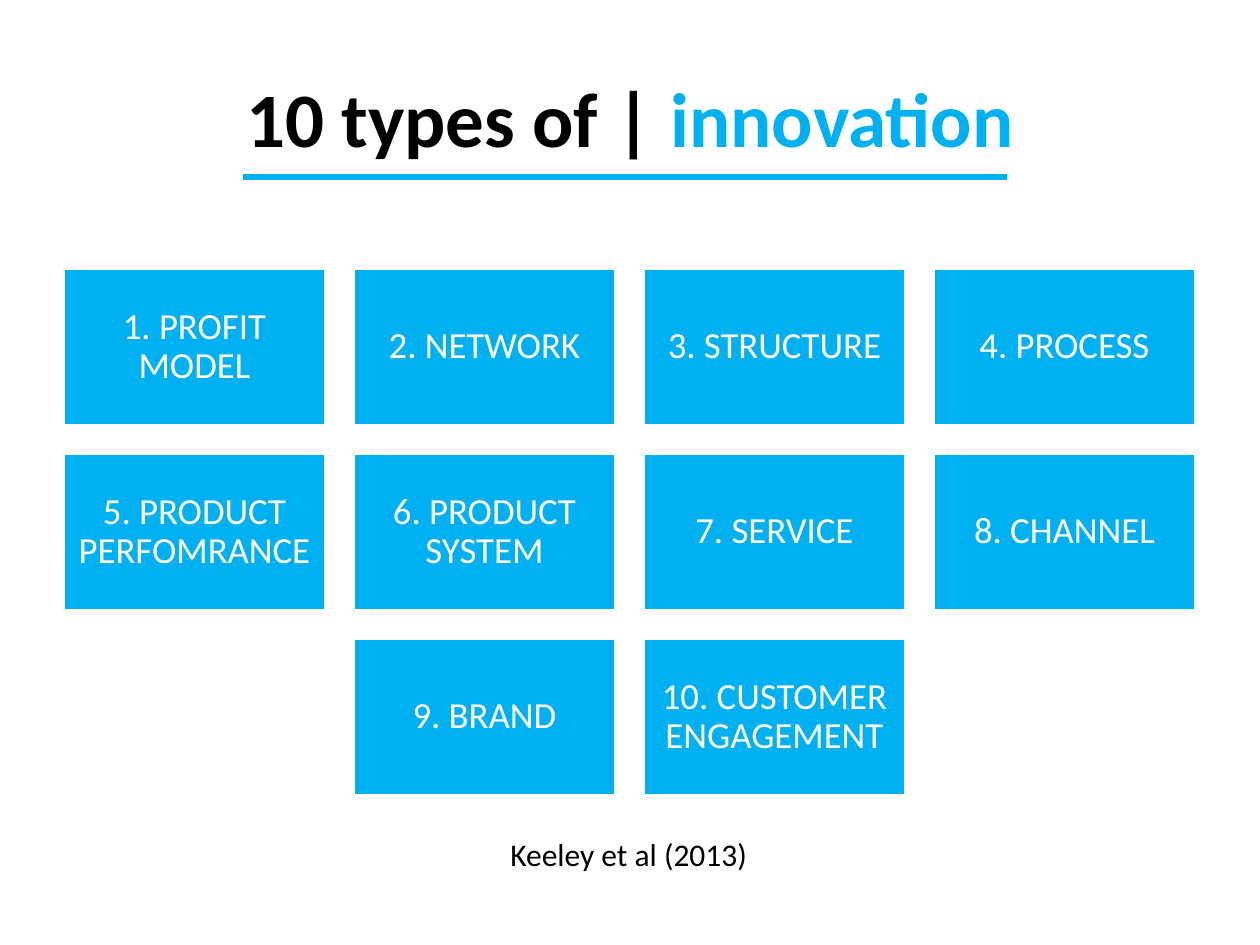
from lxml import etree
from pptx import Presentation
from pptx.dml.color import RGBColor
from pptx.enum.shapes import MSO_CONNECTOR, MSO_SHAPE
from pptx.enum.text import MSO_ANCHOR, MSO_AUTO_SIZE, PP_ALIGN
from pptx.oxml.ns import qn
from pptx.util import Pt

CENTER, MIDDLE = PP_ALIGN.CENTER, MSO_ANCHOR.MIDDLE
RECTANGLE, STRAIGHT = MSO_SHAPE.RECTANGLE, MSO_CONNECTOR.STRAIGHT
FIT_SHAPE = MSO_AUTO_SIZE.SHAPE_TO_FIT_TEXT
BLUE = RGBColor(0x00, 0xB0, 0xF0)
WHITE = RGBColor(0xFF, 0xFF, 0xFF)
BLACK = RGBColor(0x00, 0x00, 0x00)
SCALE = 914400 / 126  # EMU per px


def px(*lengths):
    return [round(length * SCALE) for length in lengths]


def add_text(paragraph, text, color, **formats):
    run = paragraph.add_run()
    run.text = text
    run.font.color.rgb = color
    for name, value in {"name": "Calibri", **formats}.items():
        setattr(run.font, name, value)


presentation = Presentation()
presentation.slide_width, presentation.slide_height = px(1260, 945)
slide = presentation.slides.add_slide(presentation.slide_layouts[5])

# Title
title = slide.shapes.title
title.left, title.top, title.width, title.height = px(63, 38, 1134, 158)
title.text_frame.vertical_anchor = MIDDLE
heading = title.text_frame.paragraphs[0]
heading.alignment = CENTER
for text, color in [("10 types of | ", BLACK), ("innovation", BLUE)]:
    add_text(heading, text, color, size=Pt(44), bold=True)

# Grid of innovation types: the last row is centred
ROWS = [
    ["1. PROFIT MODEL", "2. NETWORK", "3. STRUCTURE", "4. PROCESS"],
    ["5. PRODUCT PERFOMRANCE", "6. PRODUCT SYSTEM", "7. SERVICE", "8. CHANNEL"],
    ["9. BRAND", "10. CUSTOMER ENGAGEMENT"],
]
BOX_WIDTH, BOX_HEIGHT, PITCH_X, PITCH_Y = 263, 158, 290, 185
MARGIN = px(11)[0]
for row, labels in enumerate(ROWS):
    indent = (4 - len(labels)) * PITCH_X // 2
    for column, label in enumerate(labels):
        box = slide.shapes.add_shape(RECTANGLE, *px(
            63 + indent + column * PITCH_X, 268 + row * PITCH_Y, BOX_WIDTH, BOX_HEIGHT))
        box.shadow.inherit = False
        box.fill.solid()
        box.fill.fore_color.rgb = BLUE
        box.line.color.rgb = WHITE
        box.line.width = Pt(2)
        frame = box.text_frame
        frame_formats = {
            "word_wrap": True, "vertical_anchor": MIDDLE,
            "margin_left": MARGIN, "margin_right": MARGIN,
            "margin_top": MARGIN, "margin_bottom": MARGIN,
        }
        for name, value in frame_formats.items():
            setattr(frame, name, value)
        paragraph = frame.paragraphs[0]
        paragraph.alignment = CENTER
        paragraph.line_spacing = 0.9
        add_text(paragraph, label, WHITE, size=Pt(21))

# Line under the title
underline = slide.shapes.add_connector(STRAIGHT, *px(243, 177, 1007, 177))
underline.line.color.rgb = BLUE
underline.line.width = Pt(3)
etree.SubElement(underline.element.find(qn("p:spPr")), qn("a:effectLst"))

# Citation
citation = slide.shapes.add_textbox(*px(498, 829, 266, 50))
citation.text_frame.word_wrap = False
citation.text_frame.auto_size = FIT_SHAPE
add_text(citation.text_frame.paragraphs[0], "Keeley et al (2013)", BLACK, size=Pt(18))

presentation.save("out.pptx")
